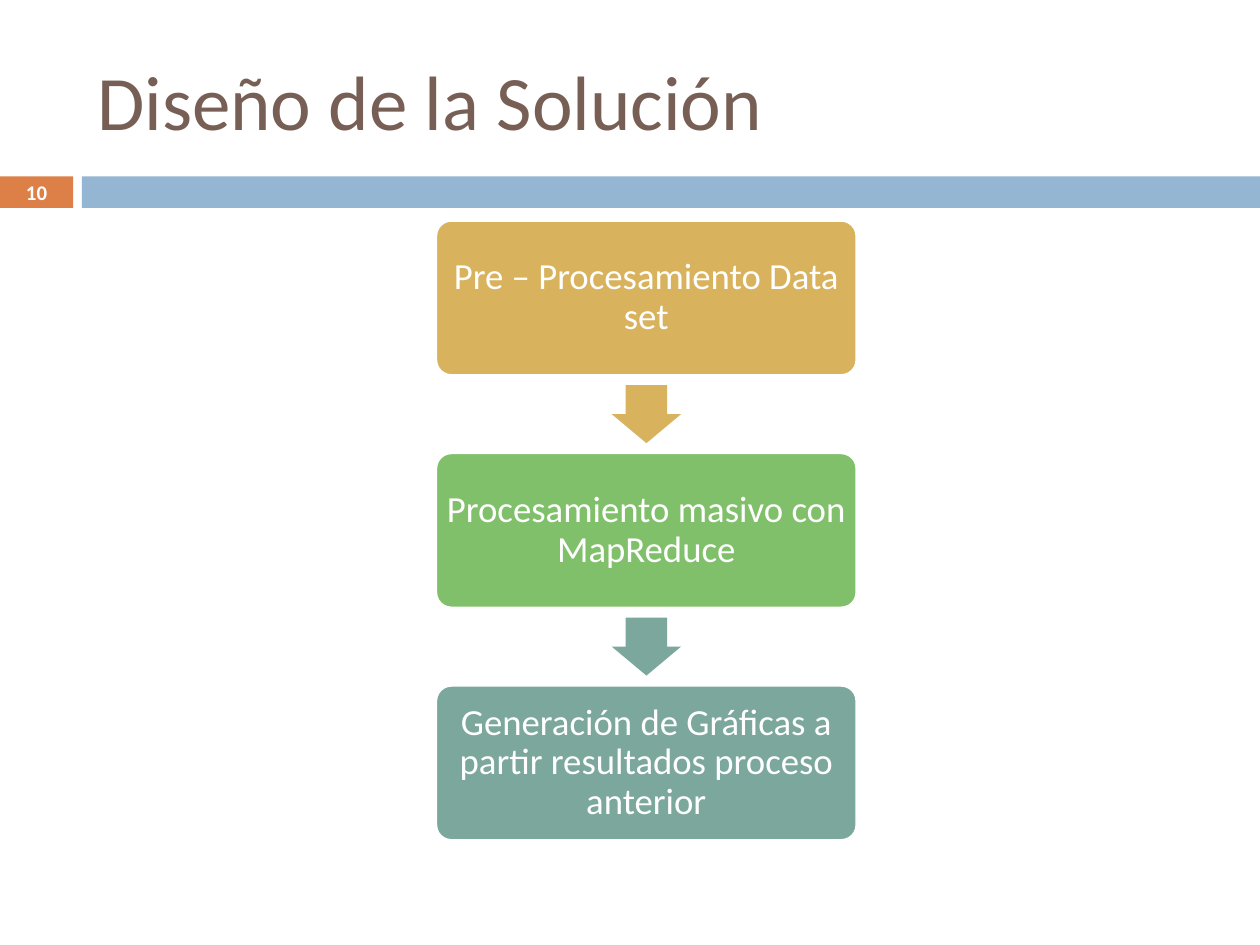
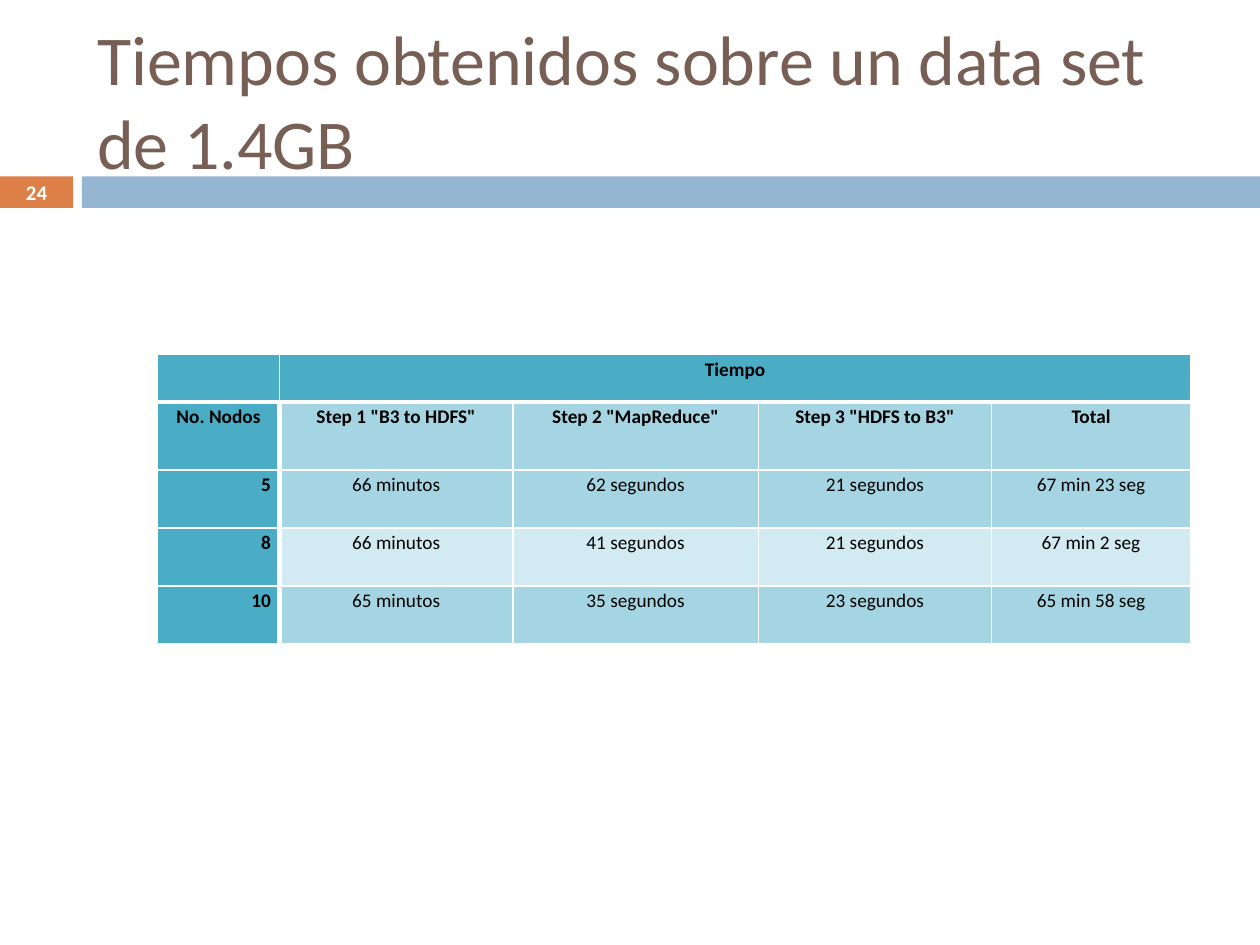
from lxml.etree import SubElement
from pptx import Presentation
from pptx.dml.color import RGBColor
from pptx.enum.shapes import MSO_SHAPE
from pptx.enum.text import MSO_ANCHOR, MSO_AUTO_SIZE, PP_ALIGN
from pptx.oxml.ns import qn
from pptx.util import Inches, Pt

FONT = "Calibri"
COLORS = {
    "title": "775F55", "number": "DD8047", "band": "94B6D2",
    "gold": "D8B25C", "green": "81C06B", "teal": "7BA79D",
    "header": "4BACC6", "dark_row": "A5D5E2", "light_row": "D2EAF1",
    "white": "FFFFFF", "black": "000000",
}

DESIGN = {"title": "Diseño de la Solución", "size": 44, "number": "10"}
# Step text, colour of its box, colour of the arrow that leads to it
STEPS = [
    ("Pre – Procesamiento Data set", "gold", None),
    ("Procesamiento masivo con MapReduce", "green", "gold"),
    ("Generación de Gráficas a partir resultados proceso anterior", "teal", "teal"),
]

TIMES = {"title": "Tiempos obtenidos sobre un data set de 1.4GB", "size": 40, "number": "24"}
TIME_ROWS = [
    ("", "Tiempo", "", "", ""),
    ("No. Nodos", 'Step 1 "B3 to HDFS"', 'Step 2 "MapReduce"', 'Step 3 "HDFS to B3"', "Total"),
    ("5", "66 minutos", "62 segundos", "21 segundos", "67 min 23 seg"),
    ("8", "66 minutos", "41 segundos", "21 segundos", "67 min 2 seg"),
    ("10", "65 minutos", "35 segundos", "23 segundos", "65 min 58 seg"),
]
COLUMN_WIDTHS = [0.97, 1.85, 1.95, 1.85, 1.58]
ROW_HEIGHTS = [0.38, 0.54, 0.46, 0.46, 0.46]

SLIDE_W, SLIDE_H = 10, 7.5
BAND_TOP, BAND_H = 1.4, 0.25
NUMBER_W, BAND_LEFT = 0.58, 0.65
STEP_LEFT, STEP_TOP, STEP_W, STEP_H, STEP_PITCH = 3.46, 1.75, 3.34, 1.23, 1.845
ARROW_LENGTH, ARROW_WIDTH = 0.46, 0.55


def rgb(name):
    return RGBColor.from_string(COLORS[name])


def write(frame, text, size, color="white", bold=False, align=PP_ALIGN.CENTER, spacing=1.0):
    frame.word_wrap = True
    paragraph = frame.paragraphs[0]
    paragraph.alignment = align
    paragraph.line_spacing = spacing
    run = paragraph.add_run()
    run.text = text
    run.font.name, run.font.size, run.font.bold = FONT, Pt(size), bold
    run.font.color.rgb = rgb(color)


def set_margins(holder, side, upright):
    holder.margin_left = holder.margin_right = Inches(side)
    holder.margin_top = holder.margin_bottom = Inches(upright)


def add_block(slide, preset, left, top, width, height, color, outline=None):
    block = slide.shapes.add_shape(
        preset, Inches(left), Inches(top), Inches(width), Inches(height))
    block.shadow.inherit = False
    block.fill.solid()
    block.fill.fore_color.rgb = rgb(color)
    if outline:
        block.line.color.rgb = rgb(outline)
        block.line.width = Pt(1.5)
    else:
        block.line.fill.background()
    return block


def add_titled_slide(deck, heading):
    """Add a slide with its title, number and band."""
    slide = deck.slides.add_slide(deck.slide_layouts[5])
    title = slide.shapes.title
    title.left, title.top = Inches(0.67), Inches(0.25)
    title.width, title.height = Inches(8.92), Inches(1.08)
    title.text_frame.auto_size = MSO_AUTO_SIZE.NONE
    title.text_frame.vertical_anchor = MSO_ANCHOR.MIDDLE
    write(title.text_frame, heading["title"], heading["size"], color="title", align=PP_ALIGN.LEFT)

    number = add_block(slide, MSO_SHAPE.RECTANGLE, 0, BAND_TOP, NUMBER_W, BAND_H, "number")
    set_margins(number.text_frame, 0, 0)
    write(number.text_frame, heading["number"], 11.9, bold=True)
    add_block(slide, MSO_SHAPE.RECTANGLE, BAND_LEFT, BAND_TOP,
              SLIDE_W - BAND_LEFT, BAND_H, "band")
    return slide


def add_steps(slide):
    for index, (text, color, arrow_color) in enumerate(STEPS):
        top = STEP_TOP + index * STEP_PITCH
        if arrow_color:
            gap_middle = top - (STEP_PITCH - STEP_H) / 2
            arrow = add_block(
                slide, MSO_SHAPE.RIGHT_ARROW,
                STEP_LEFT + (STEP_W - ARROW_LENGTH) / 2, gap_middle - ARROW_WIDTH / 2,
                ARROW_LENGTH, ARROW_WIDTH, arrow_color)
            arrow.rotation = 90
            arrow.adjustments[0], arrow.adjustments[1] = 0.6, 0.5
        step = add_block(slide, MSO_SHAPE.ROUNDED_RECTANGLE, STEP_LEFT, top,
                         STEP_W, STEP_H, color, outline="white")
        step.adjustments[0] = 0.1
        set_margins(step.text_frame, 0.05, 0.05)
        write(step.text_frame, text, 21, spacing=0.9)


def set_borders(cell, row, column):
    """Draw white edges, thick under the header row and beside the node column."""
    body = row > 0
    thick = {"L": body and column == 1, "R": body and column == 0,
             "T": row == 1, "B": row == 0}
    properties = cell._tc.get_or_add_tcPr()
    for side, is_thick in thick.items():
        edge = SubElement(properties, qn(f"a:ln{side}"), w=str(Pt(3 if is_thick else 1)))
        fill = SubElement(edge, qn("a:solidFill"))
        SubElement(fill, qn("a:srgbClr"), val=COLORS["white"])


def add_times(slide):
    times = slide.shapes.add_table(
        len(ROW_HEIGHTS), len(COLUMN_WIDTHS), Inches(1.25), Inches(2.81),
        Inches(sum(COLUMN_WIDTHS)), Inches(sum(ROW_HEIGHTS))).table
    for column, width in zip(times.columns, COLUMN_WIDTHS):
        column.width = Inches(width)
    for row, height in zip(times.rows, ROW_HEIGHTS):
        row.height = Inches(height)
    times.cell(0, 1).merge(times.cell(0, len(COLUMN_WIDTHS) - 1))

    for r, values in enumerate(TIME_ROWS):
        for c, value in enumerate(values):
            cell = times.cell(r, c)
            set_borders(cell, r, c)
            set_margins(cell, 0.07, 0)
            cell.fill.solid()
            if r == 0 or c == 0:
                color = "header"
            else:
                color = "light_row" if r == 3 else "dark_row"
            cell.fill.fore_color.rgb = rgb(color)
            if value:
                align = PP_ALIGN.RIGHT if c == 0 and r > 1 else PP_ALIGN.CENTER
                write(cell.text_frame, value, 11, color="black",
                      bold=r < 2 or c == 0, align=align, spacing=1.15)


def main():
    deck = Presentation()
    deck.slide_width, deck.slide_height = Inches(SLIDE_W), Inches(SLIDE_H)
    add_steps(add_titled_slide(deck, DESIGN))
    add_times(add_titled_slide(deck, TIMES))
    deck.save("out.pptx")


if __name__ == "__main__":
    main()
